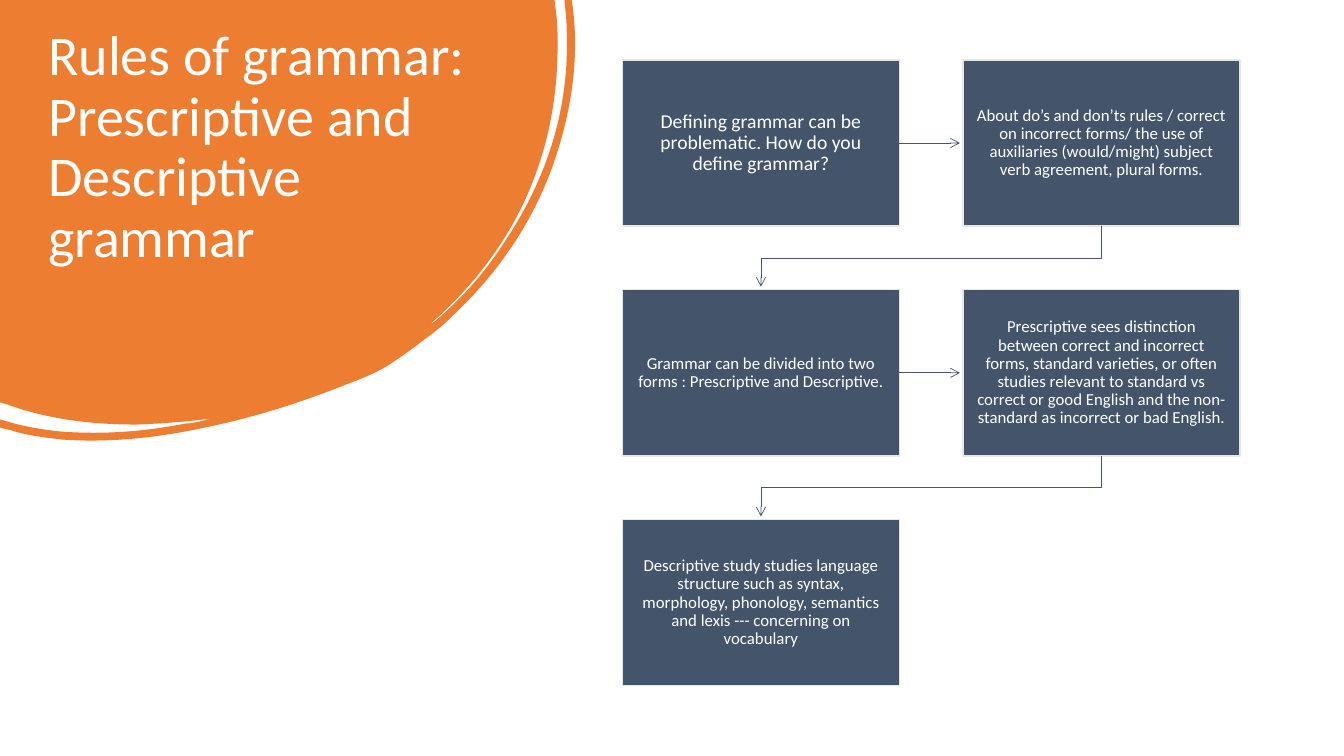
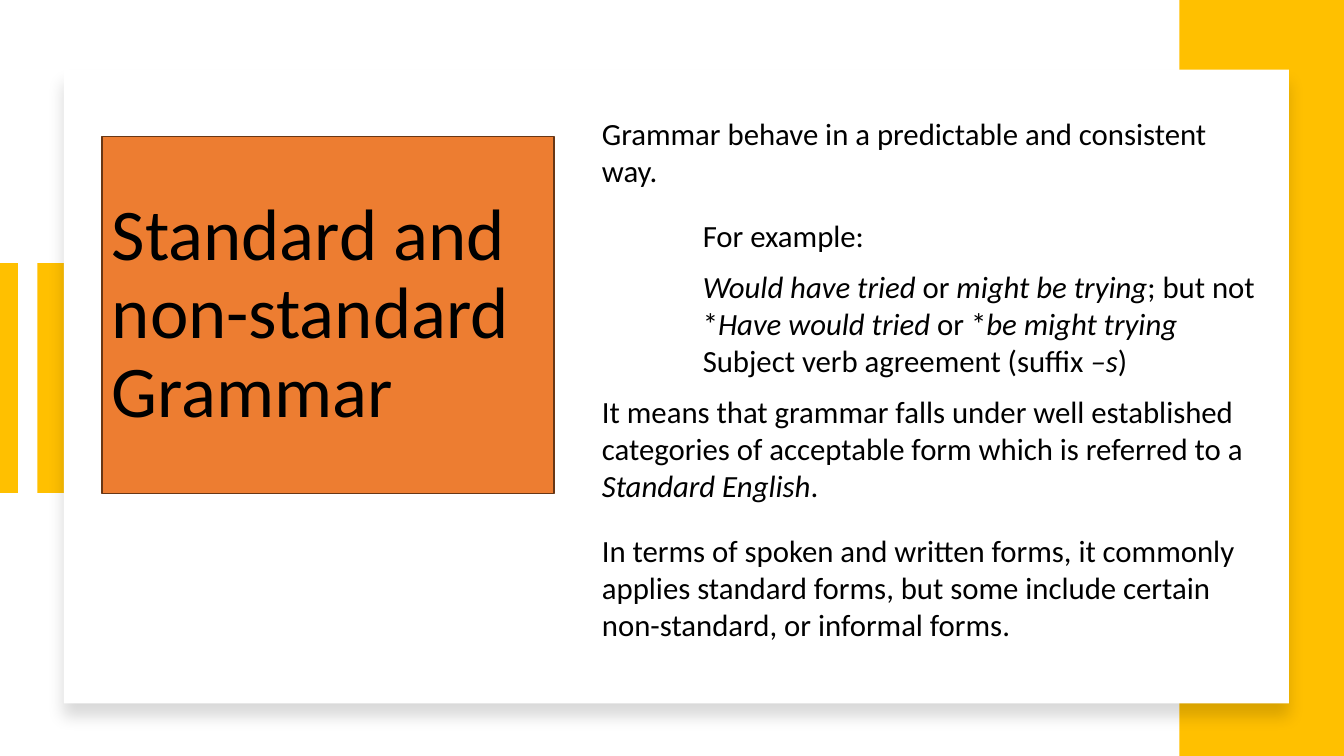
from pptx import Presentation
from pptx import util as u
from pptx.dml.color import RGBColor
from pptx.enum import shapes, text
from pptx.oxml import parse_xml
from pptx.oxml.ns import nsdecls

FONT = "Calibri"
WHITE, BLACK = "FFFFFF", "000000"
ORANGE, BROWN, GOLD = "ED7D31", "683715", "FFC000"
SLATE, PALE = "44546A", "E7E6E6"
PAGE = (0, 0, 13.33, 7.5)

BLOB_GRID = (571, 437)
BLOB_OUTLINE = [
    (0, 0), (550, 0), (552, 17),
    (553, 26, 553, 36, 553, 45), (553, 101, 542, 154, 518, 204),
    (496, 249, 465, 288, 427, 321), (429, 321, 430, 319, 432, 318),
    (459, 295, 482, 269, 501, 239), (543, 176, 565, 107, 562, 30),
    (562, 21, 561, 12, 560, 3), (560, 0), (567, 0), (568, 7),
    (574, 54, 568, 102, 553, 150), (533, 214, 497, 268, 448, 314),
    (439, 323, 429, 331, 419, 338), (409, 346, 399, 353, 387, 361),
    (375, 369, 360, 375, 344, 381), (299, 399, 252, 414, 203, 424),
    (157, 434, 110, 439, 63, 436), (45, 434, 28, 432, 12, 427),
    (0, 424), (0, 416), (4, 417),
    (23, 423, 42, 426, 61, 428), (103, 431, 143, 428, 184, 420),
    (189, 420, 193, 419, 198, 418), (202, 417, 206, 416, 210, 415),
    (186, 418, 161, 420, 136, 421), (92, 421, 48, 416, 7, 401),
    (0, 399),
]

STEPS = [
    ("Defining grammar can be problematic. How do you define grammar?", 14),
    ("About do’s and don’ts rules / correct on incorrect forms/ the use of auxiliaries "
     "(would/might) subject verb agreement, plural forms.", 12),
    ("Grammar can be divided into two forms : Prescriptive and Descriptive.", 12),
    ("Prescriptive sees distinction between correct and incorrect forms, standard varieties, "
     "or often studies relevant to standard vs correct or good English and the non-standard "
     "as incorrect or bad English.", 12),
    ("Descriptive study studies language structure such as syntax, morphology, phonology, "
     "semantics and lexis --- concerning on vocabulary", 12),
]

BODY = [
    (0, 0, 10, ["Grammar behave in a predictable and consistent way."]),
    (1, 10, 10, ["For example:"]),
    (1, 0, 0, ["", "Would have tried ", "or ", "might be trying", "; but not"]),
    (1, 0, 0, ["*", "Have would tried ", "or *", "be might trying"]),
    (1, 0, 0, ["Subject verb agreement (suffix ", "–s", ")"]),
    (0, 10, 10, ["It means that grammar falls under well established categories of acceptable "
                 "form which is referred to a ", "Standard English", "."]),
    (0, 10, 0, ["In terms of spoken and written forms, it commonly applies standard forms, "
                "but some include certain non-standard, or informal forms."]),
]


def color(value):
    """Turn a hex string into a colour."""
    return RGBColor.from_string(value)


def within(box, x, y, w, h):
    """Return the part of a box given in percent of its size."""
    left, top, width, height = box
    return left + width * x / 100, top + height * y / 100, width * w / 100, height * h / 100


def emu(*lengths):
    """Convert inches to slide units."""
    return [u.Inches(length) for length in lengths]


def paint(shape, fill, line=None, weight=1):
    """Give a shape a flat fill and an optional outline, without shadow."""
    shape.shadow.inherit = False
    shape.fill.solid()
    shape.fill.fore_color.rgb = color(fill)
    if line:
        shape.line.color.rgb = color(line)
        shape.line.width = u.Pt(weight)
    else:
        shape.line.fill.background()
    return shape


def add_panel(page, box, fill, line=None):
    """Draw a filled rectangle."""
    panel = page.shapes.add_shape(shapes.MSO_SHAPE.RECTANGLE, *emu(*box))
    return paint(panel, fill, line)


def style(para, size, ink, align=text.PP_ALIGN.LEFT, spacing=0.9):
    """Set the font and layout of a paragraph."""
    para.alignment, para.line_spacing = align, spacing
    para.font.name, para.font.size = FONT, u.Pt(size)
    para.font.color.rgb = color(ink)


def write(shape, words, size, ink, anchor, align=text.PP_ALIGN.LEFT):
    """Put one wrapped paragraph into a shape."""
    frame = shape.text_frame
    frame.word_wrap, frame.vertical_anchor = True, anchor
    frame.text = words
    style(frame.paragraphs[0], size, ink, align)
    return frame


def add_line(page, kind, ends, ink, weight, arrow=False):
    """Draw a connector between two points, with an optional open arrowhead."""
    line = page.shapes.add_connector(kind, *emu(*ends))
    line.line.color.rgb = color(ink)
    line.line.width = u.Pt(weight)
    if arrow:
        line.line._get_or_add_ln().append(
            parse_xml(f'<a:tailEnd {nsdecls("a")} type="arrow"/>'))
    line._element.spPr.append(parse_xml(f'<a:effectLst {nsdecls("a")}/>'))
    return line


def add_return(page, start_x, start_y, end_x, end_y, turn):
    """Draw an elbow arrow that runs down, left at the given drop, and down again."""
    middle_x, middle_y = (start_x + end_x) / 2, (start_y + end_y) / 2
    half_run, half_drop = (start_x - end_x) / 2, (end_y - start_y) / 2
    ends = (middle_x - half_drop, middle_y - half_run, middle_x + half_drop, middle_y + half_run)
    elbow = add_line(page, shapes.MSO_CONNECTOR.ELBOW, ends, SLATE, 0.5, True)
    outline = elbow._element.spPr
    outline.xfrm.set("rot", str(90 * 60000))
    bend = round(turn / (end_y - start_y) * 100000)
    outline.find(".//{*}avLst").append(
        parse_xml(f'<a:gd {nsdecls("a")} name="adj1" fmla="val {bend}"/>'))


def add_blob(page, box):
    """Draw the brush-like blob in the corner, with true curves."""
    left, top, width, height = emu(*box)
    columns, rows = BLOB_GRID
    builder = page.shapes.build_freeform(0, 0, scale=(width / columns, height / rows))
    builder.add_line_segments([(columns, 0), (columns, rows)])
    blob = paint(builder.convert_to_shape(left, top), ORANGE)
    contour = blob._element.spPr.find(".//{*}pathLst")[0]
    for corner in contour.findall("{*}lnTo"):
        contour.remove(corner)
    for place, part in enumerate(BLOB_OUTLINE[1:], 1):
        tag = "lnTo" if len(part) == 2 else "cubicBezTo"
        points = "".join(f'<a:pt x="{x}" y="{y}"/>' for x, y in zip(part[::2], part[1::2]))
        contour.insert(place, parse_xml(f'<a:{tag} {nsdecls("a")}>{points}</a:{tag}>'))


def add_flow(page, box, steps, columns=2, rows=3, gap=0.63, clearance=0.03):
    """Lay out the steps row by row and join them with arrows."""
    left, top, width, height = box
    card_w = (width - gap * (columns - 1)) / columns
    card_h = (height - gap * (rows - 1)) / rows
    for index, (words, size) in enumerate(steps):
        row, column = divmod(index, columns)
        x, y = left + column * (card_w + gap), top + row * (card_h + gap)
        card = add_panel(page, (x, y, card_w, card_h), SLATE, PALE)
        frame = write(card, words, size, WHITE, text.MSO_ANCHOR.MIDDLE, text.PP_ALIGN.CENTER)
        frame.margin_left = frame.margin_right = u.Inches(0.13)
        frame.margin_top = frame.margin_bottom = u.Inches(0.14)
        if index == len(steps) - 1:
            continue
        if column < columns - 1:
            middle = y + card_h / 2
            ends = (x + card_w, middle, x + card_w + gap - clearance, middle)
            add_line(page, shapes.MSO_CONNECTOR.STRAIGHT, ends, SLATE, 0.5, True)
        else:
            add_return(page, x + card_w / 2, y + card_h,
                       left + card_w / 2, y + card_h + gap - clearance, gap / 2)


def add_body(page, box):
    """Write the explanation, its spans alternating upright and italic."""
    frame = page.shapes.add_textbox(*emu(*box)).text_frame
    frame.word_wrap, frame.vertical_anchor = True, text.MSO_ANCHOR.MIDDLE
    for index, (indent, before, after, spans) in enumerate(BODY):
        para = frame.add_paragraph() if index else frame.paragraphs[0]
        para._p.get_or_add_pPr().set("marL", str(u.Inches(indent)))
        style(para, 22, BLACK, spacing=1.0)
        para.space_before, para.space_after = u.Pt(before), u.Pt(after)
        for order, words in enumerate(spans):
            if words:
                span = para.add_run()
                span.text, span.font.italic = words, order % 2 == 1


def add_frame(page, box):
    """Draw the gold bands and the raised white card."""
    add_panel(page, within(box, 2.78, 34.8, 2.55, 30.4), GOLD)
    x, y, _, h = within(box, 0.6, 34.8, 0, 30.4)
    add_line(page, shapes.MSO_CONNECTOR.STRAIGHT, (x, y, x, y + h), GOLD, 14)
    add_panel(page, within(box, 87.75, 0, 12.25, 100), GOLD)
    card = add_panel(page, within(box, 4.75, 9.2, 91.15, 83.85), WHITE)
    card._element.spPr.find("{*}effectLst").append(parse_xml(
        f'<a:outerShdw {nsdecls("a")} blurRad="{u.Pt(11)}" dist="{u.Pt(10)}" dir="5400000">'
        f'<a:srgbClr val="{BLACK}"><a:alpha val="15000"/></a:srgbClr></a:outerShdw>'))


def rules_slide(page, box):
    """Build the slide with the blob title and the flow of steps."""
    add_blob(page, within(box, 0, 0, 42.84, 58.3))
    title = page.shapes.add_textbox(*emu(*within(box, 2.86, 2.97, 34.5, 47)))
    write(title, "Rules of grammar: Prescriptive and Descriptive grammar",
          40, WHITE, text.MSO_ANCHOR.TOP)
    add_flow(page, within(box, 46.31, 7.92, 45.95, 82.8), STEPS)


def standard_slide(page, box):
    """Build the slide with the framed card, title block and explanation."""
    add_frame(page, box)
    title = add_panel(page, within(box, 7.58, 18.1, 33.65, 47.15), ORANGE, BROWN)
    write(title, "Standard and non-standard Grammar", 52, BLACK, text.MSO_ANCHOR.MIDDLE)
    add_body(page, within(box, 44.05, 11.57, 51.1, 77))


def main():
    """Build and save the deck."""
    deck = Presentation()
    deck.slide_width, deck.slide_height = emu(*PAGE[2:])
    for build in (rules_slide, standard_slide):
        build(deck.slides.add_slide(deck.slide_layouts[6]), PAGE)
    deck.save("out.pptx")


if __name__ == "__main__":
    main()
